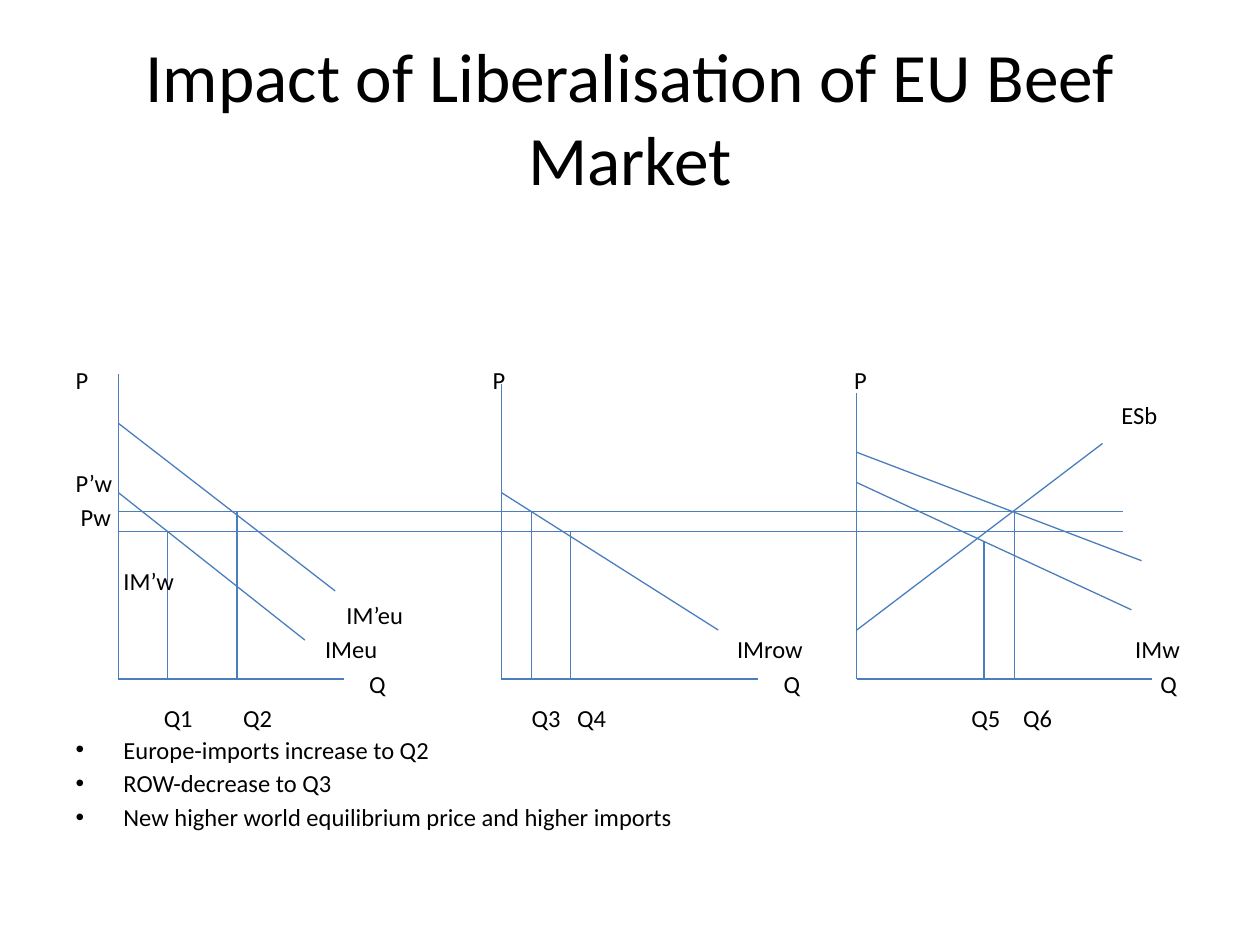
from dataclasses import dataclass

from lxml.etree import SubElement
from pptx import Presentation
from pptx.dml.color import RGBColor
from pptx.enum.shapes import MSO_CONNECTOR
from pptx.enum.text import MSO_ANCHOR, PP_ALIGN
from pptx.oxml.ns import qn
from pptx.util import Inches, Pt

COLORS = {"text": "000000", "line": "4B7EBC"}
FONT = "Calibri"
LABEL_SIZE = 14
ROW_STEP = 0.272
LABEL_HEIGHT = 0.24


@dataclass
class Box:
    left: float
    top: float
    width: float
    height: float


# Label rows, measured from the top of the panels to the middle of the text
UPPER_ROWS = [0.05 + ROW_STEP * row for row in range(5)]
LOWER_ROWS = [1.64 + ROW_STEP * row for row in range(5)]

PANEL_TOP, PANEL_HEIGHT = 2.97, 2.42
NEW_PRICE, OLD_PRICE = 1.09, 1.25

# Positions inside a panel run from its top left corner.
# curves: x1, y1, x2, y2; quantities: x, top; labels: text, x, row
PANELS = [
    {   # Europe
        "left": 0.94, "width": 1.79, "axis_top": 0,
        "curves": [(0, 0.94, 1.48, 2.11), (0, 0.39, 1.72, 1.72)],
        "quantities": [(0.39, OLD_PRICE), (0.94, NEW_PRICE)],
        "labels": [
            ("P", -0.34, UPPER_ROWS[0]), ("P’w", -0.34, UPPER_ROWS[3]),
            ("Pw", -0.3, UPPER_ROWS[4]), ("IM’w", 0.04, LOWER_ROWS[0]),
            ("IM’eu", 1.81, LOWER_ROWS[1]), ("IMeu", 1.64, LOWER_ROWS[2]),
            ("Q", 1.99, LOWER_ROWS[3]), ("Q1", 0.36, LOWER_ROWS[4]),
            ("Q2", 0.99, LOWER_ROWS[4]),
        ],
    },
    {   # Rest of the world
        "left": 3.98, "width": 2.04, "axis_top": 0.08,
        "curves": [(0, 0.94, 1.72, 2.03)],
        "quantities": [(0.24, NEW_PRICE), (0.55, OLD_PRICE)],
        "labels": [
            ("P", -0.07, UPPER_ROWS[0]), ("IMrow", 1.87, LOWER_ROWS[2]),
            ("Q", 2.24, LOWER_ROWS[3]), ("Q3", 0.24, LOWER_ROWS[4]),
            ("Q4", 0.6, LOWER_ROWS[4]),
        ],
    },
    {   # World
        "left": 6.8, "width": 2.34, "axis_top": 0.15,
        "curves": [(0, 2.03, 1.95, 0.55), (0, 0.86, 2.18, 1.87),
                   (0, 0.62, 2.26, 1.48)],
        "quantities": [(1.01, 1.33), (1.25, NEW_PRICE)],
        "labels": [
            ("P", -0.02, UPPER_ROWS[0]), ("ESb", 2.1, UPPER_ROWS[1]),
            ("IMw", 2.21, LOWER_ROWS[2]), ("Q", 2.41, LOWER_ROWS[3]),
            ("Q5", 0.91, LOWER_ROWS[4]), ("Q6", 1.32, LOWER_ROWS[4]),
        ],
    },
]

CONCLUSIONS = [
    "Europe-imports increase to Q2",
    "ROW-decrease to Q3",
    "New higher world equilibrium price and higher imports",
]


def write_text(para, text, size=LABEL_SIZE, align=PP_ALIGN.LEFT, color="text"):
    para.alignment = align
    span = para.add_run()
    span.text = text
    span.font.name = FONT
    span.font.size = Pt(size)
    span.font.color.rgb = RGBColor.from_string(COLORS[color])


def add_text_frame(page, box, wrap=True):
    shape = page.shapes.add_textbox(Inches(box.left), Inches(box.top),
                                    Inches(box.width), Inches(box.height))
    frame = shape.text_frame
    frame.word_wrap = wrap
    frame.margin_left = frame.margin_right = 0
    frame.margin_top = frame.margin_bottom = 0
    return frame


def add_line(page, x1, y1, x2, y2):
    line = page.shapes.add_connector(MSO_CONNECTOR.STRAIGHT, Inches(x1), Inches(y1),
                                     Inches(x2), Inches(y2))
    line.line.color.rgb = RGBColor.from_string(COLORS["line"])
    line.line.width = Pt(0.75)
    SubElement(line._element.spPr, qn("a:effectLst"))


def add_title(page, box, text):
    title = page.shapes.title
    title.left, title.top = Inches(box.left), Inches(box.top)
    title.width, title.height = Inches(box.width), Inches(box.height)
    title.text_frame.word_wrap = True
    title.text_frame.vertical_anchor = MSO_ANCHOR.MIDDLE
    write_text(title.text_frame.paragraphs[0], text, size=39.6, align=PP_ALIGN.CENTER)


def add_panel(page, box, panel):
    bottom = box.top + box.height
    # Axes
    add_line(page, box.left, box.top + panel["axis_top"], box.left, bottom)
    add_line(page, box.left, bottom, box.left + box.width, bottom)
    # Supply and demand curves
    for x1, y1, x2, y2 in panel["curves"]:
        add_line(page, box.left + x1, box.top + y1, box.left + x2, box.top + y2)
    # Quantity drops
    for x, top in panel["quantities"]:
        add_line(page, box.left + x, box.top + top, box.left + x, bottom)
    # Labels
    for text, x, middle in panel["labels"]:
        label = Box(box.left + x, box.top + middle - LABEL_HEIGHT / 2, 0.6, LABEL_HEIGHT)
        write_text(add_text_frame(page, label, wrap=False).paragraphs[0], text)


def add_price_lines(page, box):
    for price in (NEW_PRICE, OLD_PRICE):
        y = box.top + price
        add_line(page, box.left, y, box.left + box.width, y)


def add_conclusions(page, box, lines):
    frame = add_text_frame(page, box)
    for index, text in enumerate(lines):
        para = frame.add_paragraph() if index else frame.paragraphs[0]
        write_text(para, text)
        para.space_before = Pt(2.5)
        properties = para._p.get_or_add_pPr()
        properties.set("marL", str(Inches(0.38)))
        properties.set("indent", str(Inches(-0.38)))
        SubElement(properties, qn("a:buFont"), typeface="Arial")
        SubElement(properties, qn("a:buChar"), char="•")


def main():
    deck = Presentation()
    deck.slide_width, deck.slide_height = Inches(10), Inches(7.5)
    page = deck.slides.add_slide(deck.slide_layouts[5])

    add_title(page, Box(0.5, 0.3, 9, 1.25), "Impact of Liberalisation of EU Beef Market")
    for panel in PANELS:
        add_panel(page, Box(panel["left"], PANEL_TOP, panel["width"], PANEL_HEIGHT), panel)
    add_price_lines(page, Box(0.94, PANEL_TOP, 7.97, PANEL_HEIGHT))
    add_conclusions(page, Box(0.6, 5.83, 8.8, 0.85), CONCLUSIONS)

    deck.save("out.pptx")


if __name__ == "__main__":
    main()
